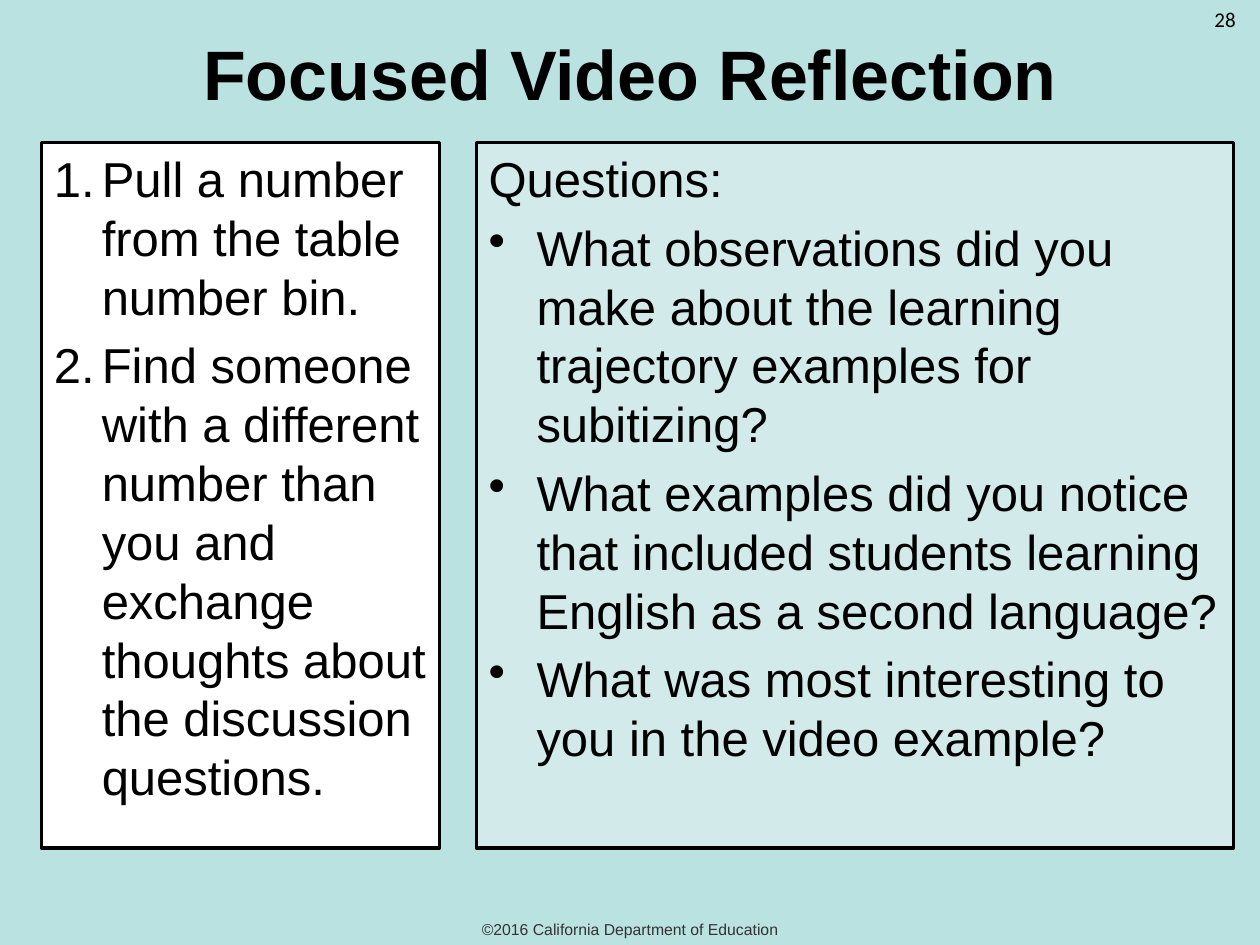
from pptx import Presentation
from pptx import util as u
from pptx.dml.color import RGBColor
from pptx.enum import shapes, text
from lxml import etree

A = "{http://schemas.openxmlformats.org/drawingml/2006/main}"
W, H = u.Inches(10), u.Inches(7.5)


def rgb(c):
    return RGBColor.from_string(c)


def write(p, txt, size, color="000000", name="Arial", bold=False):
    p.text = txt
    f = p.runs[0].font
    f.size, f.name, f.bold = u.Pt(size), name, bold
    f.color.rgb = rgb(color)


prs = Presentation()
prs.slide_width, prs.slide_height = W, H
s = prs.slides.add_slide(prs.slide_layouts[5])
s.background.fill.solid()
s.background.fill.fore_color.rgb = rgb("BAE2E1")

title = s.shapes.title
title.left, title.top = int(W * 0.05), u.Inches(0.02)
title.width, title.height = int(W * 0.9), u.Inches(1.11)
title.text_frame.vertical_anchor = text.MSO_ANCHOR.MIDDLE
p = title.text_frame.paragraphs[0]
p.alignment = text.PP_ALIGN.CENTER
write(p, "Focused Video Reflection", 40, bold=True)

NUM = ("buAutoNum", {"type": "arabicPeriod"})
DOT = ("buChar", {"char": "•"})
NONE = ("buNone", {})
panels = [
    (0.33, 3.16, "FFFFFF", [
        (NUM, "Pull a number from the table number bin."),
        (NUM, "Find someone with a different number than you and exchange "
              "thoughts about the discussion questions."),
    ]),
    (3.78, 6.01, "D2EAE9", [
        (NONE, "Questions:"),
        (DOT, "What observations did you make about the learning trajectory "
              "examples for subitizing?"),
        (DOT, "What examples did you notice that included students learning "
              "English as a second language?"),
        (DOT, "What was most interesting to you in the video example?"),
    ]),
]
for left, width, fill, items in panels:
    sp = s.shapes.add_shape(shapes.MSO_SHAPE.RECTANGLE, u.Inches(left),
                            u.Inches(1.13), u.Inches(width), u.Inches(5.6))
    sp.shadow.inherit = False
    sp.fill.solid()
    sp.fill.fore_color.rgb = rgb(fill)
    sp.line.color.rgb = rgb("000000")
    sp.line.width = u.Pt(2)
    tf = sp.text_frame
    tf.word_wrap = True
    tf.vertical_anchor = text.MSO_ANCHOR.TOP
    for i, (bullet, txt) in enumerate(items):
        p = tf.paragraphs[0] if i == 0 else tf.add_paragraph()
        pPr = p._p.get_or_add_pPr()
        pPr.set("marL", str(u.Inches(0.38)))
        pPr.set("indent", str(-u.Inches(0.38)))
        etree.SubElement(pPr, A + bullet[0], bullet[1])
        p.alignment = text.PP_ALIGN.LEFT
        if i:
            p.space_before = u.Pt(5.6)
        write(p, txt, 28)

labels = [
    (0, 7.25, 10, 0.25, "©2016 California Department of Education", 9,
     "333333", "Arial", text.PP_ALIGN.CENTER, text.MSO_ANCHOR.MIDDLE),
    (9.54, 0, 0.46, 0.4, "28", 12,
     "000000", "Calibri", text.PP_ALIGN.LEFT, text.MSO_ANCHOR.TOP),
]
for x, y, w, h, txt, size, color, name, align, anchor in labels:
    sp = s.shapes.add_textbox(*map(u.Inches, (x, y, w, h)))
    tf = sp.text_frame
    tf.word_wrap = True
    tf.vertical_anchor = anchor
    tf.paragraphs[0].alignment = align
    write(tf.paragraphs[0], txt, size, color, name)

prs.save("out.pptx")
